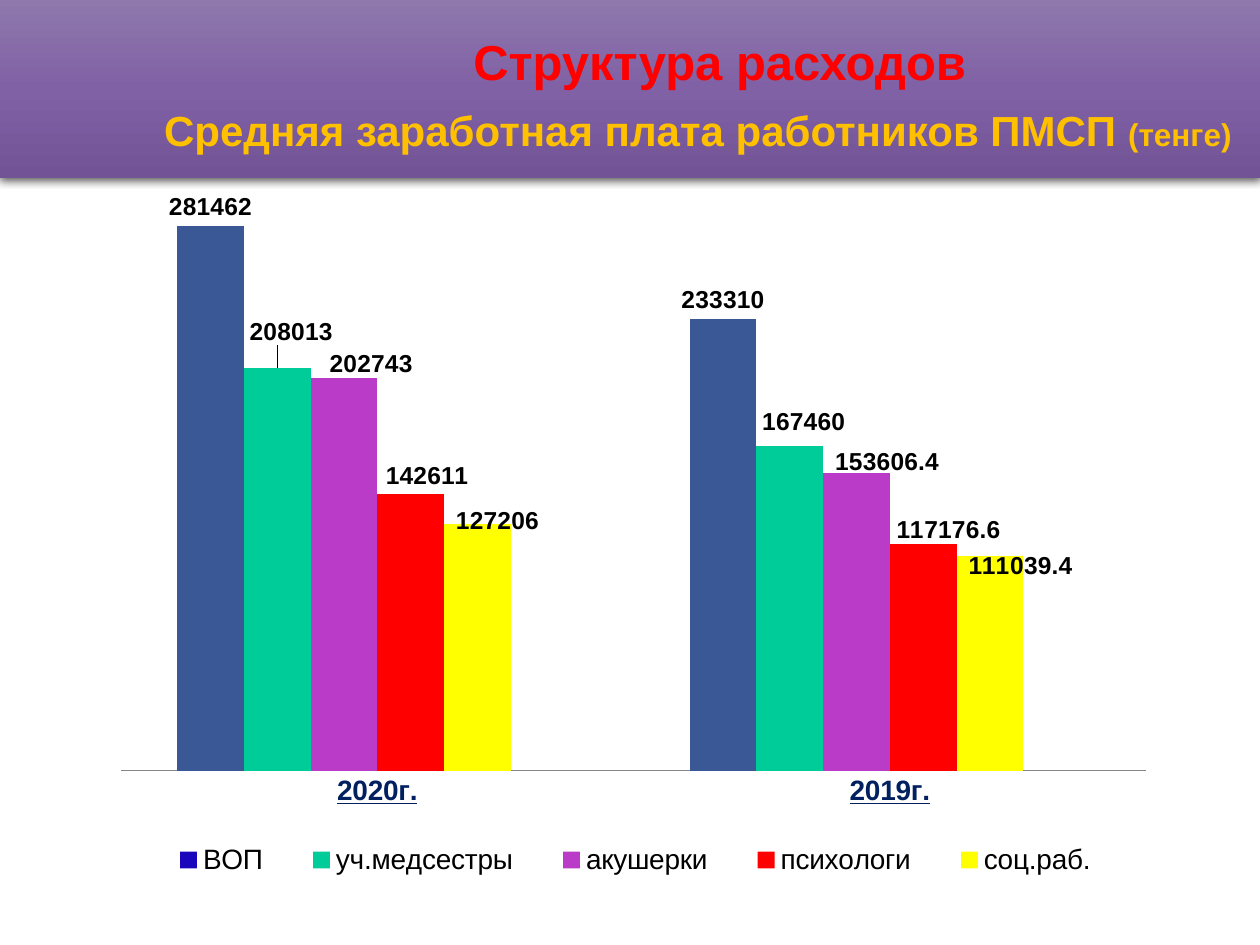
from copy import deepcopy

from lxml import etree
from pptx import Presentation
from pptx.chart.data import CategoryChartData
from pptx.dml.color import RGBColor
from pptx.enum.chart import (XL_CHART_TYPE, XL_LABEL_POSITION,
                             XL_LEGEND_POSITION, XL_TICK_MARK)
from pptx.enum.shapes import MSO_SHAPE
from pptx.enum.text import MSO_ANCHOR, PP_ALIGN
from pptx.oxml import parse_xml
from pptx.oxml.ns import nsdecls, qn
from pptx.util import Pt

COLUMNS = XL_CHART_TYPE.COLUMN_CLUSTERED
OUTSIDE_END = XL_LABEL_POSITION.OUTSIDE_END
BOTTOM = XL_LEGEND_POSITION.BOTTOM
NO_TICK = XL_TICK_MARK.NONE
CENTER = PP_ALIGN.CENTER
MIDDLE = MSO_ANCHOR.MIDDLE

BLACK = RGBColor(0, 0, 0)
RED = RGBColor(0xFF, 0, 0)
GOLD = RGBColor(0xFF, 0xC0, 0)
NAVY = RGBColor(0, 0x20, 0x60)
GRAY = RGBColor(0x86, 0x86, 0x86)
STEEL = RGBColor(0x3A, 0x58, 0x96)
BANNER = [(0, RGBColor(0x8E, 0x78, 0xAC)),
          (0.5, RGBColor(0x80, 0x61, 0xA5)),
          (1, RGBColor(0x71, 0x53, 0x96))]
FONT = "Arial"
CHART_W, CHART_H = 683.5, 418.5

# name, values, colour, label shift in points for each year
SERIES = [
    ("ВОП", (281462, 233310), RGBColor(0x1A, 0x04, 0xBC), ()),
    ("уч.медсестры", (208013, 167460), RGBColor(0, 0xCC, 0x99),
     ((8, -10), (8, -3.5))),
    ("акушерки", (202743, 153606.4), RGBColor(0xBB, 0x3B, 0xC9),
     ((15.5, 2.5), (17.5, 4.5))),
    ("психологи", (142611, 117176.6), RED, ((9.5, 0), (14.5, 3))),
    ("соц.раб.", (127206, 111039.4), RGBColor(0xFF, 0xFF, 0),
     ((11.5, 9), (17.5, 16.5))),
    ("Series 6", (None, None), RGBColor(0xF7, 0x96, 0x46), ()),
]


def add_heading(left, top, width, height, runs):
    """Add a centred one-line heading; runs are (text, size, colour)."""
    tf = s.shapes.add_textbox(Pt(left), Pt(top), Pt(width), Pt(height)).text_frame
    tf.word_wrap = True
    tf.vertical_anchor = MIDDLE
    p = tf.paragraphs[0]
    p.alignment = CENTER
    p._p.get_or_add_pPr().set("marL", str(Pt(28)))
    for text, size, color in runs:
        r = p.add_run()
        r.text = text
        r.font.name = FONT
        r.font.size = Pt(size)
        r.font.bold = True
        r.font.color.rgb = color


def manual_layout(modes, **fractions):
    """Build a c:layout element from mode settings and chart fractions."""
    layout = parse_xml(f"<c:layout {nsdecls('c')}><c:manualLayout/></c:layout>")
    for name, value in {**modes, **fractions}.items():
        etree.SubElement(layout[0], qn(f"c:{name}")).set("val", str(value))
    return layout


prs = Presentation()
prs.slide_width, prs.slide_height = Pt(720), Pt(540)
s = prs.slides.add_slide(prs.slide_layouts[6])

# Banner
banner = s.shapes.add_shape(MSO_SHAPE.RECTANGLE, 0, 0, Pt(720), Pt(101.5))
banner.line.fill.background()
banner.fill.gradient()
banner.fill.gradient_angle = 270
stop_list = banner._element.spPr.find(".//" + qn("a:gsLst"))
stop_list.insert(1, deepcopy(stop_list[0]))
for stop, (position, color) in zip(banner.fill.gradient_stops, BANNER):
    stop.position = position
    stop.color.rgb = color
banner.shadow.inherit = False
banner._element.spPr.find(qn("a:effectLst")).append(parse_xml(
    f'<a:outerShdw {nsdecls("a")} blurRad="{Pt(4.5)}" dist="{Pt(1.5)}" '
    'dir="5400000" rotWithShape="0"><a:srgbClr val="000000">'
    '<a:alpha val="63000"/></a:srgbClr></a:outerShdw>'))

add_heading(92, 21, 610.5, 28, [("Структура расходов", 28, RED)])

# Salary chart; the empty last series leaves room to the right of each group
data = CategoryChartData()
data.categories = ["2020г.", "2019г."]
for name, values, color, shifts in SERIES:
    data.add_series(name, values)
chart = s.shapes.add_chart(COLUMNS, Pt(18), Pt(108.5), Pt(CHART_W),
                           Pt(CHART_H), data).chart
chart.has_title = False
chart.font.name = "Calibri"
chart.font.size = Pt(18)
chart.font.color.rgb = BLACK

plot = chart.plots[0]
plot.gap_width = 168
plot.overlap = 0
plot.vary_by_categories = False
for series, (name, values, color, shifts) in zip(plot.series, SERIES):
    series.format.fill.solid()
    series.format.fill.fore_color.rgb = color
    labels = series.data_labels
    labels.show_value = True
    labels.position = OUTSIDE_END
    labels.font.name = FONT
    labels.font.size = Pt(14)
    labels.font.bold = True
    for i, (dx, dy) in enumerate(shifts):
        label = series.points[i].data_label
        label.position = OUTSIDE_END
        label.font.name = FONT
        label.font.size = Pt(14)
        label.font.bold = True
    for dLbl, (dx, dy) in zip(series._element.iter(qn("c:dLbl")), shifts):
        dLbl.insert(1, manual_layout({}, x=round(dx / CHART_W, 4),
                                     y=round(dy / CHART_H, 4)))
for i in range(2):
    fill = plot.series[0].points[i].format.fill
    fill.solid()
    fill.fore_color.rgb = STEEL

years = chart.category_axis
years.major_tick_mark = NO_TICK
years.format.line.color.rgb = GRAY
years.format.line.width = Pt(0.75)
font = years.tick_labels.font
font.name = FONT
font.size = Pt(16)
font.bold = True
font.underline = True
font.color.rgb = NAVY

money = chart.value_axis
money.minimum_scale, money.maximum_scale = 0, 300000
money.has_major_gridlines = False
money.visible = False

chart.has_legend = True
legend = chart.legend
legend.position = BOTTOM
legend.include_in_layout = False
legend.font.name = FONT
legend.font.size = Pt(16)
legend_pos = legend._element.find(qn("c:legendPos"))
for old in legend._element.findall(qn("c:layout")):
    legend._element.remove(old)
legend_pos.addnext(manual_layout({"xMode": "edge", "yMode": "edge"},
                                 x=0.09, y=0.88, w=0.83, h=0.07))
legend_pos.addnext(parse_xml(
    f'<c:legendEntry {nsdecls("c")}><c:idx val="5"/><c:delete val="1"/>'
    '</c:legendEntry>'))

plot_area = chart._chartSpace.chart.plotArea
for old in plot_area.findall(qn("c:layout")):
    plot_area.remove(old)
plot_area.insert(0, manual_layout(
    {"layoutTarget": "inner", "xMode": "edge", "yMode": "edge"},
    x=0.075, y=0, w=0.857, h=0.793))

add_heading(54.5, 59, 660.5, 30,
            [("Средняя заработная плата работников ПМСП ", 24, GOLD),
             ("(тенге)", 18, GOLD)])

prs.save("out.pptx")
